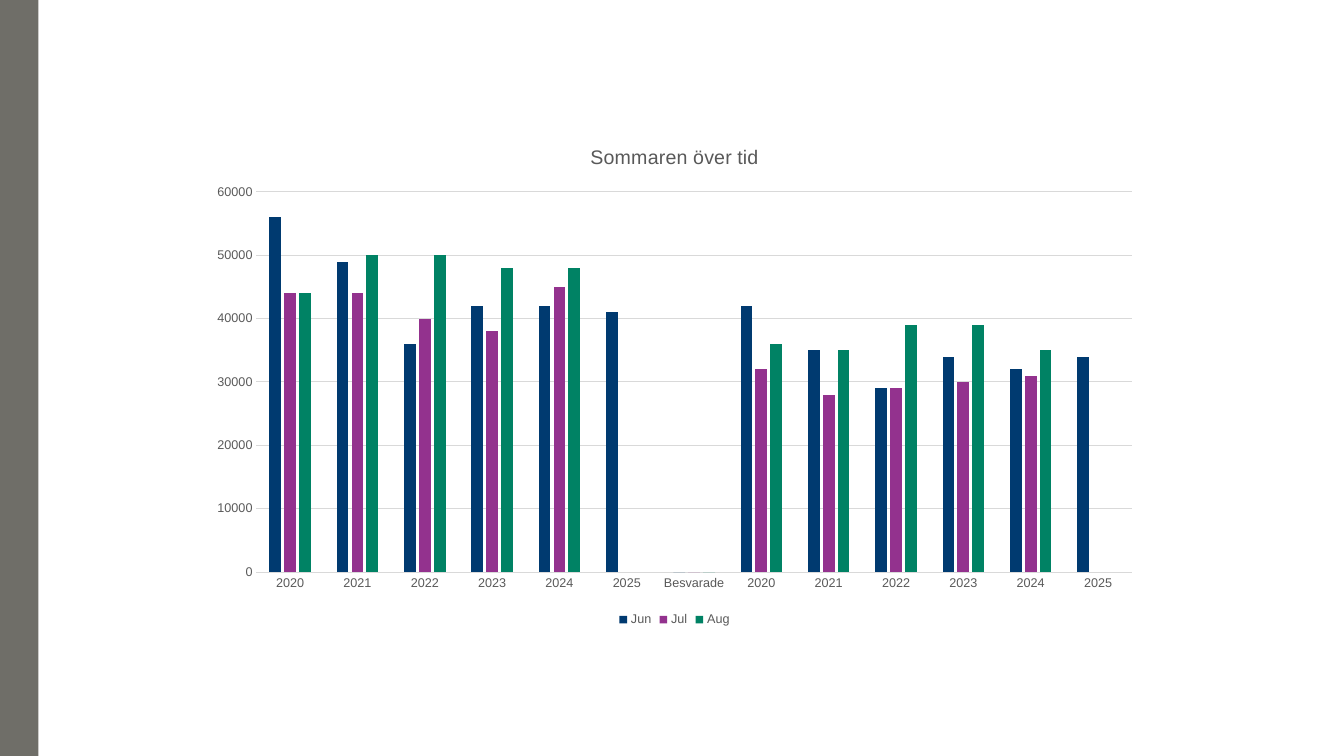
import pptx
import pptx.chart.data
import pptx.dml.color
import pptx.enum.chart
import pptx.enum.shapes
import pptx.util
from pptx.util import Cm

YEARS = ["2020", "2021", "2022", "2023", "2024", "2025"]
CATEGORIES = YEARS + ["Besvarade"] + YEARS
MONTHS = [
    ("Jun", "003A70", [56000, 49000, 36000, 42000, 42000, 41000, 0,
                       42000, 35000, 29000, 34000, 32000, 34000]),
    ("Jul", "93328E", [44000, 44000, 40000, 38000, 45000, None, 0,
                       32000, 28000, 29000, 30000, 31000, None]),
    ("Aug", "008264", [44000, 50000, 50000, 48000, 48000, None, 0,
                       36000, 35000, 39000, 39000, 35000, None]),
]


def color(value):
    return pptx.dml.color.RGBColor.from_string(value)


class SlideBuilder:
    font_name = "Arial"
    text_color = "595959"
    line_color = "D9D9D9"

    def __init__(self, slide):
        self.slide = slide

    def style_font(self, font, size):
        font.name = self.font_name
        font.size = pptx.util.Pt(size)
        font.bold = False
        font.color.rgb = color(self.text_color)

    def style_line(self, line):
        line.color.rgb = color(self.line_color)
        line.width = pptx.util.Pt(0.75)

    def add_rectangle(self, left, top, width, height, fill):
        shape = self.slide.shapes.add_shape(
            pptx.enum.shapes.MSO_SHAPE.RECTANGLE, left, top, width, height)
        shape.shadow.inherit = False
        shape.fill.solid()
        shape.fill.fore_color.rgb = color(fill)
        shape.line.fill.background()

    def add_column_chart(self, left, top, width, height, title, categories, columns):
        data = pptx.chart.data.CategoryChartData()
        data.categories = categories
        for name, _, values in columns:
            data.add_series(name, values)
        chart = self.slide.shapes.add_chart(
            pptx.enum.chart.XL_CHART_TYPE.COLUMN_CLUSTERED,
            left, top, width, height, data).chart
        self.style_font(chart.font, 9)

        chart.has_title = True
        run = chart.chart_title.text_frame.paragraphs[0].add_run()
        run.text = title
        self.style_font(run.font, 14)

        chart.has_legend = True
        chart.legend.position = pptx.enum.chart.XL_LEGEND_POSITION.BOTTOM
        chart.legend.include_in_layout = False
        self.style_font(chart.legend.font, 9)

        plot = chart.plots[0]
        plot.gap_width = 219
        plot.overlap = -27
        plot.vary_by_categories = False
        for series, (_, fill, _) in zip(plot.series, columns):
            series.invert_if_negative = False
            series.format.fill.solid()
            series.format.fill.fore_color.rgb = color(fill)

        for axis in (chart.category_axis, chart.value_axis):
            axis.major_tick_mark = pptx.enum.chart.XL_TICK_MARK.NONE
            axis.minor_tick_mark = pptx.enum.chart.XL_TICK_MARK.NONE
            self.style_font(axis.tick_labels.font, 9)
        self.style_line(chart.category_axis.format.line)
        value_axis = chart.value_axis
        value_axis.minimum_scale = 0
        value_axis.maximum_scale = 60000
        value_axis.major_unit = 10000
        value_axis.format.line.fill.background()
        value_axis.has_major_gridlines = True
        self.style_line(value_axis.major_gridlines.format.line)


def main():
    presentation = pptx.Presentation()
    presentation.slide_width = Cm(33.87)
    presentation.slide_height = Cm(19.05)
    builder = SlideBuilder(presentation.slides.add_slide(presentation.slide_layouts[6]))
    builder.add_rectangle(0, 0, Cm(0.97), presentation.slide_height, "6F6E68")
    builder.add_column_chart(Cm(5), Cm(3.15), Cm(24), Cm(12.75),
                             "Sommaren över tid", CATEGORIES, MONTHS)
    presentation.save("out.pptx")


if __name__ == "__main__":
    main()
